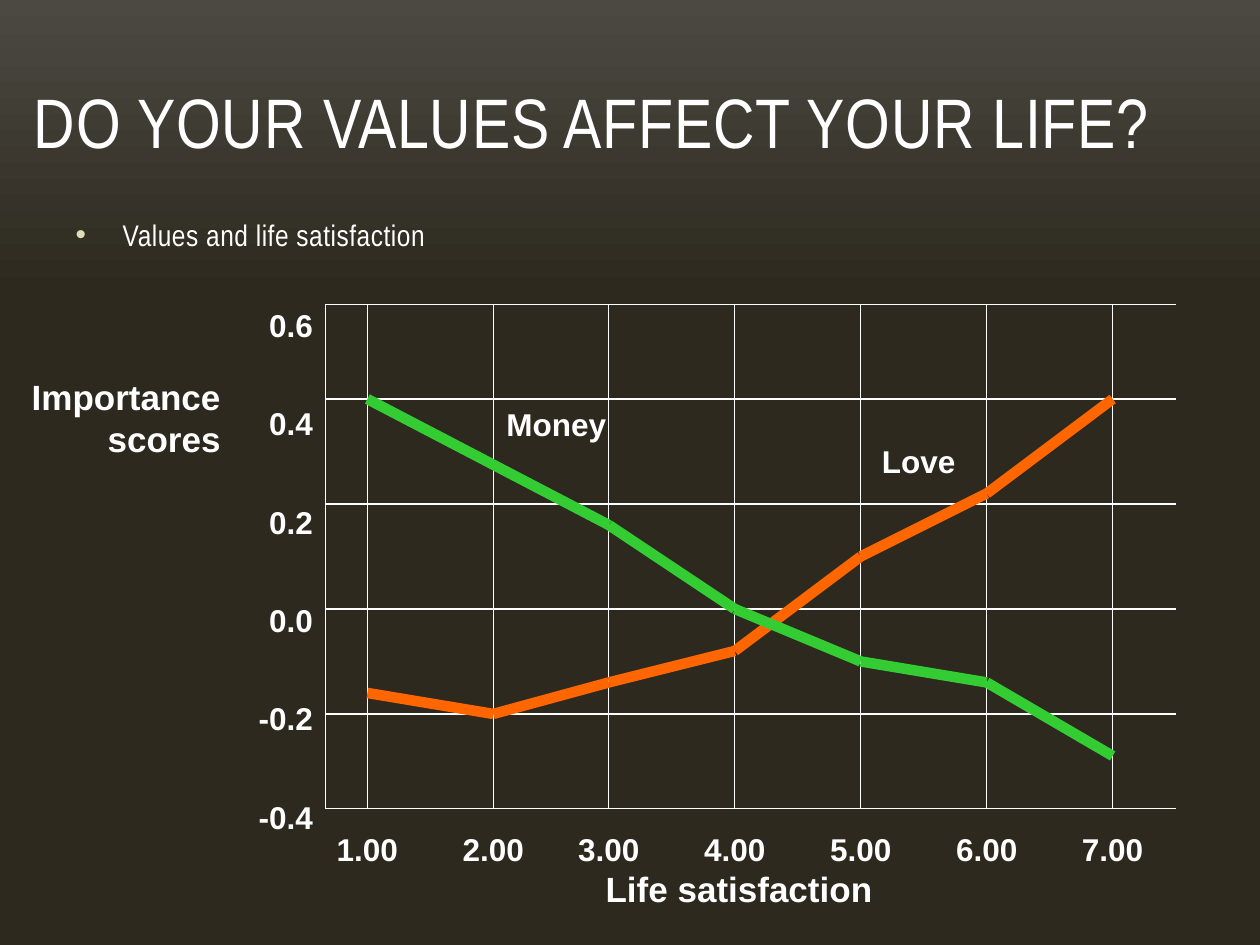
from collections import namedtuple
from copy import deepcopy
from itertools import pairwise

from lxml import etree
from pptx import Presentation
from pptx import util as u
from pptx.dml.color import RGBColor
from pptx.enum import shapes, text
from pptx.oxml import ns

Box = namedtuple("Box", "left top width height")
COLORS = {"top": "4C4943", "middle": "2D291F", "bottom": "2B271D",
          "white": "FFFFFF", "bullet": "DFDCB7", "love": "FF6600", "money": "33CC33"}
COLUMNS = [4, 16, 27, 39, 51, 63, 75]
ROWS = [0, 9, 19, 29, 39, 48]
UNITS_WIDE = 81
SERIES = {
    "love": list(zip(COLUMNS, [37, 39, 36, 33, 24, 18, 9])),
    "money": [(4, 9), (27, 21), (39, 29), (51, 34), (63, 36), (75, 43)],
}


def color(name):
    """Return the named colour."""
    return RGBColor.from_string(COLORS[name])


def child(parent, tag, **attributes):
    """Append a DrawingML element to a parent."""
    return etree.SubElement(parent, ns.qn(tag), {key: str(value) for key, value in attributes.items()})


def place(shape, box):
    """Move a shape to a box given in centimetres."""
    shape.left, shape.top, shape.width, shape.height = map(u.Cm, box)


def write(para, words, size=18, font="Arial", bold=True, align=None, line=None, tracking=None):
    """Write formatted words into a paragraph."""
    para.alignment = align
    para.line_spacing = line
    span = para.add_run()
    span.text = words
    span.font.size, span.font.name, span.font.bold = u.Pt(size), font, bold
    span.font.color.rgb = color("white")
    if tracking:
        span.font._element.set("spc", str(tracking))


def add_label(group, box, lines, sizes=(18,), wrap=False, **style):
    """Add a text box with one paragraph per line and return its frame."""
    frame = group.shapes.add_textbox(*map(u.Cm, box)).text_frame
    frame.word_wrap = wrap
    frame.auto_size = text.MSO_AUTO_SIZE.SHAPE_TO_FIT_TEXT
    for index, words in enumerate(lines):
        para = frame.add_paragraph() if index else frame.paragraphs[0]
        write(para, words, size=sizes[min(index, len(sizes) - 1)], **style)
    return frame


def add_line(group, plot, start, end, name, weight):
    """Draw a line between two points counted in plot units."""
    unit = plot.width / UNITS_WIDE
    ends = [u.Cm(edge + step * unit) for point in (start, end)
            for edge, step in zip((plot.left, plot.top), point)]
    line = group.shapes.add_connector(shapes.MSO_CONNECTOR.STRAIGHT, *ends)
    line.line.color.rgb = color(name)
    line.line.width = u.Pt(weight)
    child(line._element.spPr, "a:effectLst")


def paint_background(page):
    """Fill the page with a vertical gradient of three stops."""
    fill = page.background.fill
    fill.gradient()
    fill.gradient_angle = 270
    stops = page.element.xpath(".//a:gsLst")[0]
    stops.append(deepcopy(stops[-1]))
    for stop, name, position in zip(fill.gradient_stops, ("top", "middle", "bottom"), (0, 0.31, 1)):
        stop.color.rgb = color(name)
        stop.position = position


def add_title(page, box):
    """Fill the title placeholder."""
    title = page.shapes.title
    place(title, box)
    frame = title.text_frame
    frame.vertical_anchor = text.MSO_ANCHOR.BOTTOM
    frame.auto_size = text.MSO_AUTO_SIZE.NONE
    write(frame.paragraphs[0], "DO YOUR VALUES AFFECT YOUR LIFE?", size=40,
          font="Arial Narrow", bold=False, align=text.PP_ALIGN.LEFT, tracking=50)


def add_list(page, box):
    """Fill the body placeholder with its bullet."""
    body = page.placeholders[1]
    place(body, box)
    frame = body.text_frame
    frame.auto_size = text.MSO_AUTO_SIZE.NONE
    para = frame.paragraphs[0]
    write(para, "Values and life satisfaction", size=17, font="Arial Narrow", bold=False, tracking=30)
    para.space_after = u.Pt(6)
    props = para._p.get_or_add_pPr()
    props.set("marL", str(u.Cm(0.95)))
    props.set("indent", str(u.Cm(-0.95)))
    child(child(props, "a:buClr"), "a:srgbClr", val=COLORS["bullet"])
    child(props, "a:buChar", char="•")


def add_horizontal_axis(group, plot):
    """Write the tick labels centred under the columns, and the axis title."""
    box = Box(plot.left - 0.03, plot.top + 10.47, 16.74, 1.85)
    ticks = "".join(f"\t{value:.2f}" for value in range(1, 8))
    frame = add_label(group, box, [ticks, "Life satisfaction"], sizes=(18, 20), wrap=True)
    frame.margin_left = frame.margin_right = 0
    first, second = frame.paragraphs
    second.alignment = text.PP_ALIGN.CENTER
    tabs = child(first._p.get_or_add_pPr(), "a:tabLst")
    for column in COLUMNS:
        position = plot.left + column * plot.width / UNITS_WIDE - box.left
        child(tabs, "a:tab", pos=u.Cm(position), algn="ctr")


def add_plot(page, plot):
    """Draw the grid, both series and the labels around the plot box."""
    group = page.shapes.add_group_shape()
    for row in ROWS:
        add_line(group, plot, (0, row), (UNITS_WIDE, row), "white", 0.75)
    for column in [0] + COLUMNS:
        add_line(group, plot, (column, ROWS[0]), (column, ROWS[-1]), "white", 0.75)
    for name, points in SERIES.items():
        for start, end in pairwise(points):
            add_line(group, plot, start, end, name, 6)

    add_label(group, Box(plot.left + 3.4, plot.top + 1.91, 2.6, 1.02), ["Money"])
    add_label(group, Box(plot.left + 10.97, plot.top + 2.65, 2.1, 1.02), ["Love"])
    add_horizontal_axis(group, plot)
    add_label(group, Box(plot.left - 1.65, plot.top - 1.31, 1.65, 12.17),
              ["0.6", "0.4", "0.2", "0.0", "-0.2", "-0.4"],
              align=text.PP_ALIGN.RIGHT, line=2.6)
    add_label(group, Box(plot.left - 6.18, plot.top + 1.3, 4.32, 1.96),
              ["Importance", "scores"], sizes=(20,), align=text.PP_ALIGN.RIGHT)


def main():
    """Build and save the deck."""
    deck = Presentation()
    deck.slide_width, deck.slide_height = u.Cm(25.4), u.Cm(19.05)
    page = deck.slides.add_slide(deck.slide_layouts[1])
    paint_background(page)
    add_title(page, Box(0.43, 1.07, 24.33, 2.34))
    add_list(page, Box(1.27, 4.24, 22.71, 1.9))
    add_plot(page, Box(6.56, 6.14, 17.14, 10.16))
    deck.save("out.pptx")


if __name__ == "__main__":
    main()
